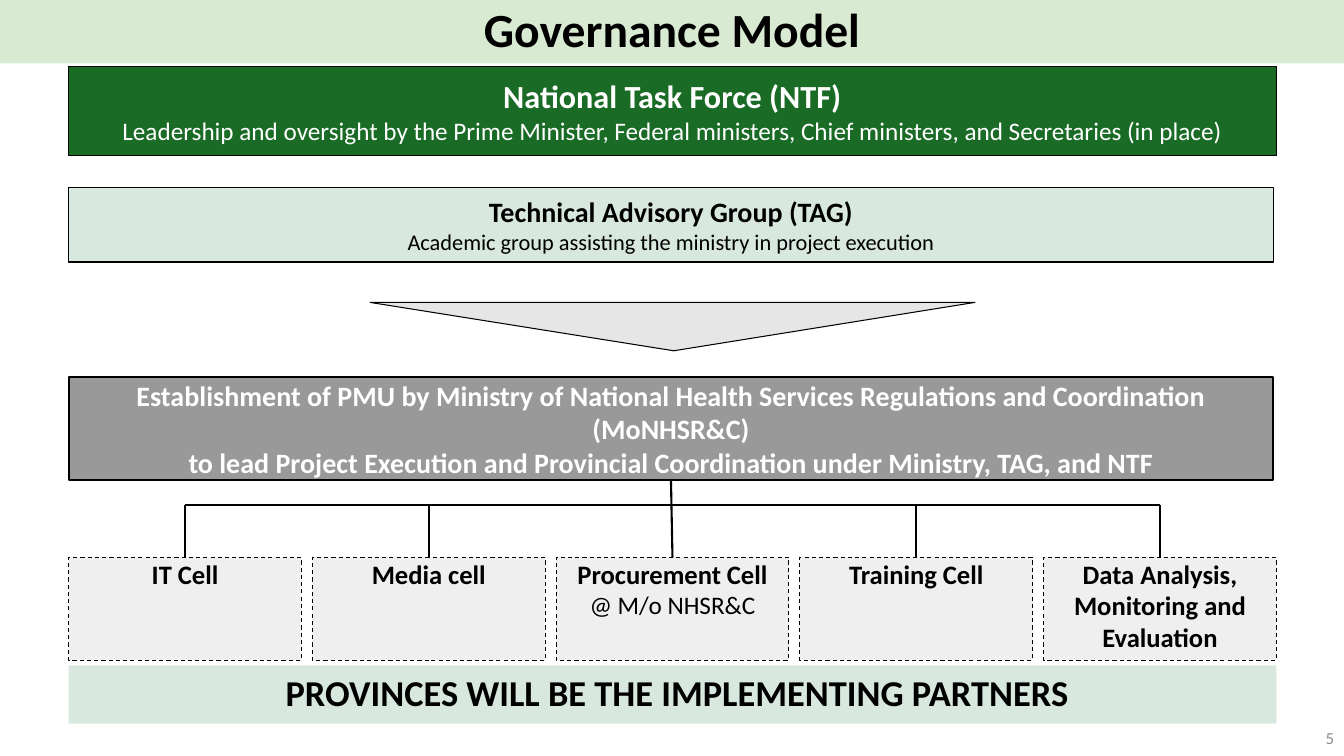
from pptx import Presentation
from pptx.dml.color import RGBColor
from pptx.enum.dml import MSO_LINE
from pptx.enum.shapes import MSO_CONNECTOR, MSO_SHAPE
from pptx.enum.text import MSO_ANCHOR, MSO_AUTO_SIZE, PP_ALIGN
from pptx.oxml.ns import qn
from pptx.util import Inches, Pt
from lxml import etree

RECT, TRIANGLE = MSO_SHAPE.RECTANGLE, MSO_SHAPE.ISOSCELES_TRIANGLE
STRAIGHT, DASH = MSO_CONNECTOR.STRAIGHT, MSO_LINE.DASH
TOP, MIDDLE = MSO_ANCHOR.TOP, MSO_ANCHOR.MIDDLE
CENTER, RIGHT = PP_ALIGN.CENTER, PP_ALIGN.RIGHT

BLACK = RGBColor(0x00, 0x00, 0x00)
WHITE = RGBColor(0xFF, 0xFF, 0xFF)
LIME = RGBColor(0xD9, 0xEA, 0xD2)
GREEN = RGBColor(0x1A, 0x6B, 0x25)
MINT = RGBColor(0xD8, 0xE8, 0xDF)
GRAY = RGBColor(0x99, 0x99, 0x99)
PALE = RGBColor(0xEF, 0xEF, 0xEF)
SILVER = RGBColor(0xE7, 0xE6, 0xE6)
DIM = RGBColor(0x8C, 0x8C, 0x8C)

# Content: each line is (text, size, bold)
TITLE = [("Governance Model", 34, True)]
NTF = [
    ("National Task Force (NTF)", 23, True),
    ("Leadership and oversight by the Prime Minister, Federal ministers, "
     "Chief ministers, and Secretaries (in place)", 18, False),
]
TAG = [
    ("Technical Advisory Group (TAG)", 20, True),
    ("Academic group assisting the ministry in project execution", 16, False),
]
PMU = [
    ("Establishment of PMU by Ministry of National Health Services "
     "Regulations and Coordination (MoNHSR&C)", 20, True),
    ("to lead Project Execution and Provincial Coordination under "
     "Ministry, TAG, and NTF", 20, True),
]
CELLS = [
    [("IT Cell", 19, True)],
    [("Media cell", 19, True)],
    [("Procurement Cell", 19, True), ("@ M/o NHSR&C", 18, False)],
    [("Training Cell", 19, True)],
    [("Data Analysis, Monitoring and Evaluation", 19, True)],
]
PARTNERS = [("PROVINCES WILL BE THE IMPLEMENTING PARTNERS", 26, True)]
NUMBER = [("5", 12, False)]

# Layout in inches
LEFT, WIDE, BAR = 0.68, 11.98, 11.95
CELL_W, CELL_H, CELL_Y, BUS_Y = 2.31, 1.02, 5.53, 5.01
STEP = (WIDE - CELL_W) / (len(CELLS) - 1)

prs = Presentation()
prs.slide_width, prs.slide_height = Inches(13.33), Inches(7.5)
slide = prs.slides.add_slide(prs.slide_layouts[5])
shapes = slide.shapes


def write(shape, lines, color=BLACK, anchor=MIDDLE, align=CENTER,
          inset=(0.1, 0.1, 0.1, 0.1)):
    frame = shape.text_frame
    frame.word_wrap = True
    frame.auto_size = MSO_AUTO_SIZE.NONE
    frame.vertical_anchor = anchor
    (frame.margin_left, frame.margin_top,
     frame.margin_right, frame.margin_bottom) = map(Inches, inset)
    frame.text = "\n".join(text for text, _, _ in lines)
    for para, (_, size, bold) in zip(frame.paragraphs, lines):
        para.alignment = align
        font = para.font
        font.name, font.size, font.bold = "Calibri", Pt(size), bold
        font.color.rgb = color


def add_box(x, y, w, h, fill, line=0.75, kind=RECT):
    box = shapes.add_shape(kind, *map(Inches, (x, y, w, h)))
    box.shadow.inherit = False
    box.fill.solid()
    box.fill.fore_color.rgb = fill
    if line:
        box.line.color.rgb = BLACK
        box.line.width = Pt(line)
    else:
        box.line.fill.background()
    return box


def add_line(x1, y1, x2, y2):
    line = shapes.add_connector(STRAIGHT, *map(Inches, (x1, y1, x2, y2)))
    line.line.color.rgb = BLACK
    line.line.width = Pt(1.5)
    etree.SubElement(line._element.spPr, qn("a:effectLst"))
    return line


# Title band
title = shapes.title
title.left, title.top = 0, 0
title.width, title.height = prs.slide_width, Inches(0.63)
title.fill.solid()
title.fill.fore_color.rgb = LIME
write(title, TITLE, inset=(0, 0, 0, 0))
title.text_frame.paragraphs[0].line_spacing = 0.9

# Governing bodies and the arrow down to the PMU
write(add_box(LEFT, 0.66, WIDE, 0.88, GREEN), NTF, WHITE)
write(add_box(LEFT, 1.86, BAR, 0.74, MINT), TAG)
arrow = add_box(3.67, 3, 6, 0.48, SILVER, kind=TRIANGLE)
arrow.rotation = 180
arrow.adjustments[0] = 0.498
pmu = add_box(LEFT, 3.74, BAR, 1.02, GRAY, 1.5)
write(pmu, PMU, WHITE)

# Cells, each joined to the bus; the middle one hangs from the PMU
mid = len(CELLS) // 2
for i, lines in enumerate(CELLS):
    x = LEFT + i * STEP
    cell = add_box(x, CELL_Y, CELL_W, CELL_H, PALE)
    cell.line.dash_style = DASH
    write(cell, lines, anchor=TOP, inset=(0.1, 0, 0.1, 0.1))
    hub = x + CELL_W / 2
    drop = add_line(hub, BUS_Y, hub, CELL_Y)
    if i == mid:
        drop.begin_connect(pmu, 2)
    drop.end_connect(cell, 0)
first = LEFT + CELL_W / 2
add_line(first, BUS_Y, first + STEP * (len(CELLS) - 1), BUS_Y)

# Footer band and slide number
band = add_box(LEFT, 6.6, WIDE, 0.58, MINT, line=0)
write(band, PARTNERS, inset=(0.2, 0.2, 0.1, 0.2))
band.text_frame.paragraphs[0].line_spacing = 0.9
number = shapes.add_textbox(*map(Inches, (10.33, 7.12, 3, 0.4)))
write(number, NUMBER, DIM, align=RIGHT)

prs.save("out.pptx")
